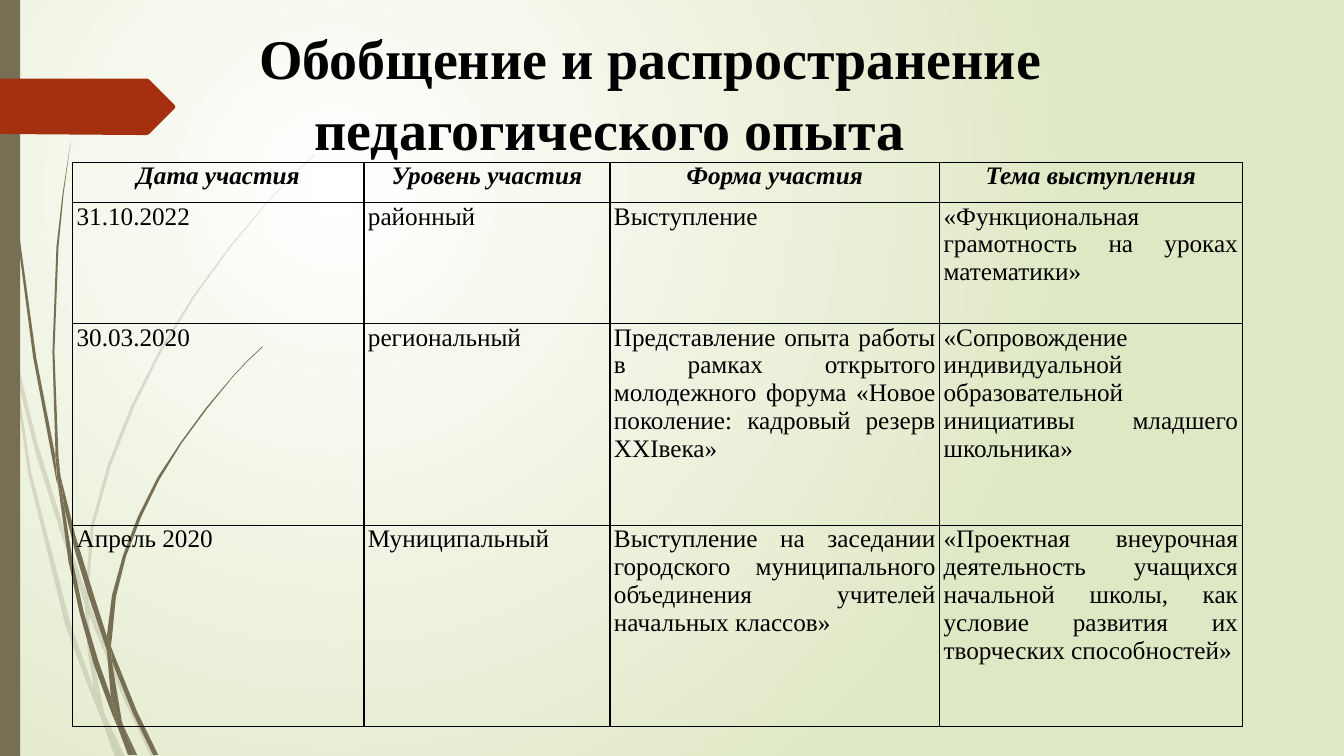
from lxml import etree
from pptx import Presentation
from pptx import util as u
from pptx.dml.color import RGBColor
from pptx.enum import shapes, text
from pptx.oxml.ns import qn

# ---- Content ----
TITLE = ["Обобщение и распространение", "педагогического опыта"]
ROWS = [
    ("Дата участия", "Уровень участия", "Форма участия", "Тема выступления"),
    ("31.10.2022", "районный", "Выступление",
     "«Функциональная грамотность на уроках математики»"),
    ("30.03.2020", "региональный",
     "Представление опыта работы в рамках открытого молодежного форума "
     "«Новое поколение: кадровый резерв XXIвека»",
     "«Сопровождение индивидуальной образовательной инициативы младшего школьника»"),
    ("Апрель 2020", "Муниципальный",
     "Выступление на заседании городского муниципального объединения "
     "учителей начальных классов»",
     "«Проектная внеурочная деятельность учащихся начальной школы, "
     "как условие развития их творческих способностей»"),
]
COL_W = [289, 244, 327, 300]
ROW_H = [40, 120, 200, 200]

COLORS = {"ink": "000000", "olive": "766F54", "red": "A53010",
          "glow": "FFFFFF", "edge": "DFE8C4"}
FONT = "Times New Roman"
PX = 9144  # EMU in one px, 100 px to the inch

# Outlines of the grass blades, in px
PALE_GRASS = [
    [(11, 350), (9, 322), (0, 282), (0, 299), (10, 344)],
    [(58, 522), (84, 599), (85, 586), (62, 520), (36, 436), (14, 345), (17, 376), (36, 452)],
    [(92, 607), (88, 596), (88, 610), (123, 694), (150, 751), (155, 751), (127, 692)],
    [(119, 751), (124, 751), (105, 711)],
    [(93, 683), (70, 619), (31, 469), (17, 376), (11, 350), (28, 470), (65, 621),
     (92, 693), (101, 714), (99, 707)],
    [(84, 599), (87, 646), (93, 683), (96, 692), (105, 711), (103, 706), (91, 646),
     (88, 610), (88, 608)],
    [(88, 584), (93, 522), (110, 462), (133, 404), (160, 349), (193, 295), (229, 245),
     (268, 198), (290, 175), (312, 154), (312, 153), (289, 175), (268, 197), (228, 244),
     (191, 294), (158, 348), (130, 403), (107, 461), (90, 522), (85, 584), (85, 586), (88, 596)],
    [(101, 714), (114, 751), (119, 751)],
    [(88, 608), (88, 610), (88, 596), (85, 586), (84, 599)],
    [(96, 692), (93, 683), (99, 707), (101, 714), (119, 751), (105, 711)],
]
DARK_GRASS = [
    [(7, 110), (17, 233), (33, 355), (56, 477), (57, 481), (55, 457), (55, 453), (36, 355),
     (19, 232), (8, 109), (5, 48), (4, 0), (3, 0), (4, 48)],
    [(88, 592), (106, 645), (106, 633), (106, 631), (93, 590), (75, 532), (60, 472),
     (64, 505), (75, 549)],
    [(113, 649), (110, 641), (111, 656), (132, 708), (152, 749), (157, 749), (136, 706)],
    [(110, 691), (98, 657), (83, 607), (72, 556), (64, 505), (57, 477), (68, 557), (79, 608),
     (93, 659), (111, 708), (117, 722), (116, 717)],
    [(60, 472), (58, 453), (54, 349), (58, 245), (63, 193), (70, 141), (62, 193), (56, 245),
     (52, 349), (55, 449)],
    [(133, 749), (136, 749), (122, 719)],
    [(57, 477), (64, 505), (60, 472), (55, 449), (55, 453)],
    [(111, 633), (115, 592), (125, 552), (140, 513), (158, 476), (180, 440), (205, 406),
     (231, 374), (245, 359), (261, 344), (260, 344), (245, 358), (231, 373), (204, 405),
     (179, 439), (156, 474), (137, 512), (122, 551), (111, 591), (106, 631), (110, 641)],
    [(117, 722), (127, 749), (131, 749)],
    [(106, 645), (110, 691), (116, 706), (122, 719), (121, 716), (111, 656), (109, 651)],
    [(106, 645), (109, 651), (111, 656), (110, 641), (106, 631), (106, 633)],
    [(116, 706), (110, 691), (116, 717), (117, 722), (130, 749), (133, 749), (122, 719)],
]
RED_TAG = [(173, 108), (148, 133), (146, 134), (136, 134), (0, 133), (0, 78), (146, 78),
           (148, 79), (173, 104), (174, 106)]


def rgb(name):
    return RGBColor.from_string(COLORS[name])


def write(p, words, size=18, bold=False, italic=False, align=text.PP_ALIGN.LEFT):
    p.alignment = align
    r = p.add_run()
    r.text = words
    f = r.font
    f.name, f.size, f.bold, f.italic = FONT, u.Pt(size), bold, italic
    f.color.rgb = rgb("ink")


def paint(sp, color, opacity=100):
    sp.shadow.inherit = False
    sp.fill.solid()
    sp.fill.fore_color.rgb = rgb(color)
    sp.line.fill.background()
    if opacity < 100:
        clr = sp._element.spPr.find(".//" + qn("a:srgbClr"))
        etree.SubElement(clr, qn("a:alpha"), val=str(opacity * 1000))


def outline(s, points, color, opacity=100):
    fb = s.shapes.build_freeform(*points[0], scale=PX)
    fb.add_line_segments(points[1:], close=True)
    paint(fb.convert_to_shape(), color, opacity)


def border(cell):
    tcPr = cell._tc.get_or_add_tcPr()
    for i, side in enumerate(("lnL", "lnR", "lnT", "lnB")):
        ln = etree.Element(qn("a:" + side), w=str(u.Pt(1)))
        fill = etree.SubElement(ln, qn("a:solidFill"))
        etree.SubElement(fill, qn("a:srgbClr"), val=COLORS["ink"])
        tcPr.insert(i, ln)


prs = Presentation()
prs.slide_width, prs.slide_height = 1333 * PX, 750 * PX
s = prs.slides.add_slide(prs.slide_layouts[5])

# ---- Background: radial glow ----
bg = s.background.fill
bg.gradient()
for stop, name in zip(bg.gradient_stops, ("glow", "edge")):
    stop.color.rgb = rgb(name)
lin = s._element.find(".//" + qn("a:lin"))
radial = etree.Element(qn("a:path"), path="circle")
etree.SubElement(radial, qn("a:fillToRect"), l="50000", t="50000", r="100000", b="100000")
lin.getparent().replace(lin, radial)

# ---- Grass, side bar and red tag ----
for blade in PALE_GRASS:
    outline(s, blade, "olive", 20)
for blade in DARK_GRASS:
    outline(s, blade, "olive")
bar = s.shapes.add_shape(shapes.MSO_SHAPE.RECTANGLE, 0, 0, 20 * PX, 750 * PX)
paint(bar, "olive")
outline(s, RED_TAG, "red")

# ---- Title, in front of the grass ----
title = s.shapes.title
s.shapes._spTree.append(title._element)
title.left, title.top, title.width, title.height = (v * PX for v in (247, 0, 1066, 300))
tf = title.text_frame
tf.word_wrap = True
tf.auto_size = text.MSO_AUTO_SIZE.NONE
tf.vertical_anchor = text.MSO_ANCHOR.TOP
tf.margin_top = 23 * PX
for i, line in enumerate(TITLE):
    p = tf.add_paragraph() if i else tf.paragraphs[0]
    write(p, line, size=40, bold=True)
    p.space_before = u.Pt(3 * i)
    p._p.get_or_add_pPr().set("marL", str(i * 55 * PX))

# ---- Table ----
frame = s.shapes.add_table(len(ROWS), len(COL_W), 72 * PX, 161 * PX,
                           sum(COL_W) * PX, sum(ROW_H) * PX)
table = frame.table
table.first_row = table.horz_banding = False
for col, w in zip(table.columns, COL_W):
    col.width = w * PX
for i, (row, h) in enumerate(zip(table.rows, ROW_H)):
    row.height = h * PX
    head = i == 0
    align = text.PP_ALIGN.CENTER if head else text.PP_ALIGN.JUSTIFY
    for cell, words in zip(row.cells, ROWS[i]):
        cell.fill.background()
        cell.margin_left = cell.margin_right = 4 * PX
        cell.margin_top = cell.margin_bottom = 0
        write(cell.text_frame.paragraphs[0], words, bold=head, italic=head, align=align)
        border(cell)

prs.save("out.pptx")
